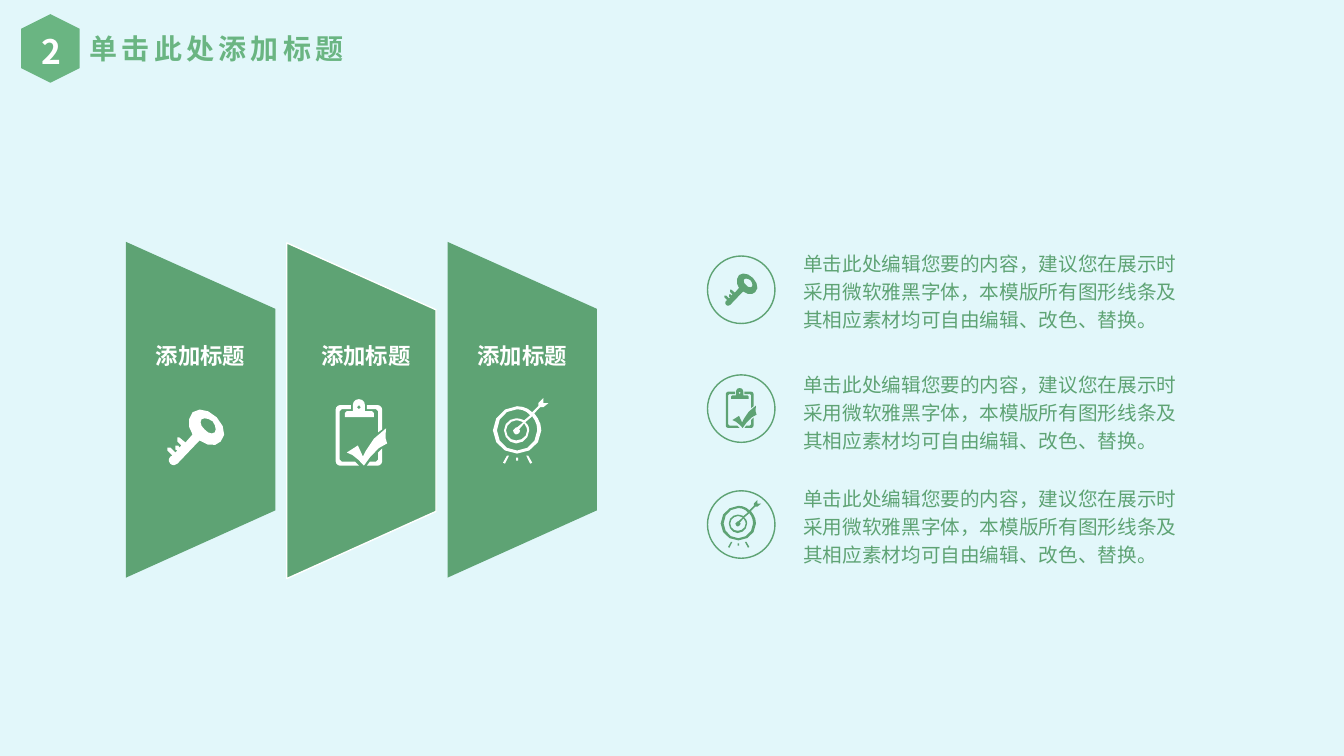
from dataclasses import dataclass
from math import dist

from lxml import etree
from pptx import Presentation
from pptx.dml.color import RGBColor
from pptx.enum.shapes import MSO_SHAPE
from pptx.enum.text import MSO_AUTO_SIZE, PP_ALIGN
from pptx.oxml.ns import qn
from pptx.shapes.autoshape import Shape
from pptx.slide import Slide
from pptx.util import Pt

HEXAGON = MSO_SHAPE.HEXAGON
OVAL = MSO_SHAPE.OVAL
FIT_SHAPE = MSO_AUTO_SIZE.SHAPE_TO_FIT_TEXT
LEFT = PP_ALIGN.LEFT
CENTER = PP_ALIGN.CENTER

Point = tuple[float, float]
Contour = list[tuple[float, ...]]
Icon = list[Contour]


@dataclass(frozen=True)
class Theme:
    background: RGBColor = RGBColor(0xE2, 0xF7, 0xFA)
    accent: RGBColor = RGBColor(0x6A, 0xB5, 0x82)
    green: RGBColor = RGBColor(0x5E, 0xA3, 0x74)
    white: RGBColor = RGBColor(0xFF, 0xFF, 0xFF)
    heading_font: str = "Noto Sans CJK SC"
    body_font: str = "Arial"
    number_size: float = 24
    title_size: float = 20
    label_size: float = 16
    body_size: float = 14
    line_width: float = 1


THEME = Theme()


@dataclass(frozen=True)
class TextStyle:
    font: str
    size: float
    color: RGBColor
    bold: bool = True
    alignment: PP_ALIGN = CENTER
    tracking: int = 0
    wrap: bool = True


@dataclass(frozen=True)
class Step:
    icon: Icon
    panel_top: float
    outlined: bool
    label_left: float
    large_icon: Point
    circle_top: float
    small_icon: Point
    small_scale: float
    body_top: float


NUMBER = TextStyle(THEME.heading_font, THEME.number_size, THEME.white, wrap=False)
TITLE = TextStyle(THEME.heading_font, THEME.title_size, THEME.accent, alignment=LEFT, tracking=300)
LABEL = TextStyle(THEME.body_font, THEME.label_size, THEME.white)
BODY = TextStyle(THEME.body_font, THEME.body_size, THEME.green, bold=False, alignment=LEFT)

LABEL_TEXT = "添加标题"
BODY_TEXT = "单击此处编辑您要的内容，建议您在展示时采用微软雅黑字体，本模版所有图形线条及其相应素材均可自由编辑、改色、替换。"

ICON_UNIT = 0.72
SHORT_CURVE = 5
CURVE_STEPS = 3
PANEL_LEFT, PANEL_PITCH = 90, 114.84
PANEL_OUTLINE = [(0, 239.8), (0, 0), (106.6, 47.8), (106.6, 191.8)]

KEY: Icon = [
    [(33, 33), (11, 56), (8, 58, 6, 58, 4, 56), (2, 54, 2, 51, 4, 49), (6, 48), (1, 43),
     (0, 42, 0, 41, 1, 40), (2, 39, 3, 39, 4, 40), (9, 45), (11, 43), (9, 42),
     (8, 40, 8, 39, 9, 38), (10, 38, 11, 38, 12, 38), (13, 40), (15, 38), (11, 34),
     (10, 33, 10, 31, 11, 30), (11, 29, 13, 29, 13, 30), (19, 35), (26, 27),
     (21, 20, 21, 11, 26, 5), (32, 0, 42, 2, 50, 10), (58, 18, 60, 29, 54, 34),
     (50, 39, 41, 39, 33, 33)],
    [(46, 14), (42, 11, 37, 10, 35, 12), (33, 14, 34, 19, 38, 22),
     (41, 26, 46, 27, 48, 25), (50, 23, 49, 18, 46, 14)],
]
CLIPBOARD: Icon = [
    [(51, 44), (44, 45, 32, 59, 28, 66), (23, 60, 16, 54, 11, 53), (22, 46), (27, 57),
     (27, 57, 36, 36, 50, 29), (50, 34, 48, 38, 51, 44)],
    [(42, 12), (40, 10), (31, 10), (31, 6), (42, 6), (44, 6, 46, 8, 46, 10), (46, 30), (42, 33)],
    [(36, 12), (38, 14), (38, 18), (9, 18), (9, 14), (11, 12), (17, 12), (17, 6),
     (17, 3, 19, 0, 23, 0), (27, 0, 29, 3, 29, 6), (29, 12)],
    [(23, 6), (21, 8), (23, 10), (25, 8)],
    [(4, 12), (4, 60), (6, 62), (19, 62), (23, 66), (4, 66), (2, 66, 0, 64, 0, 62), (0, 10),
     (0, 8, 2, 6, 4, 6), (15, 6), (15, 10), (6, 10)],
    [(40, 62), (42, 60), (42, 53), (46, 49), (46, 62), (46, 64, 44, 66, 42, 66), (31, 66),
     (34, 62)],
]
TARGET: Icon = [
    [(55, 5), (50, 9), (47, 9), (41, 15), (45, 20, 48, 25, 48, 32), (48, 45, 37, 55, 24, 55),
     (11, 55, 0, 45, 0, 32), (0, 19, 11, 8, 24, 8), (30, 8, 35, 10, 39, 14), (45, 8),
     (45, 5), (50, 0), (50, 5)],
    [(39, 18), (32, 24), (35, 26, 36, 29, 36, 32), (36, 39, 30, 45, 23, 45),
     (17, 45, 11, 39, 11, 32), (11, 25, 17, 20, 23, 20), (26, 20, 29, 21, 31, 22), (37, 17),
     (34, 13, 29, 11, 24, 11), (13, 11, 4, 20, 4, 32), (4, 43, 13, 52, 24, 52),
     (35, 52, 44, 43, 44, 32), (44, 26, 42, 22, 39, 18)],
    [(23, 36), (22, 36, 20, 34, 20, 32), (20, 31, 22, 29, 23, 29), (24, 29), (30, 24),
     (28, 23, 26, 22, 23, 22), (18, 22, 13, 27, 13, 32), (13, 38, 18, 42, 23, 42),
     (29, 42, 34, 38, 34, 32), (34, 29, 32, 27, 31, 25), (26, 31), (27, 32),
     (27, 34, 25, 36, 23, 36)],
    [(14, 57), (16, 57), (12, 65), (10, 64)],
    [(23, 59), (25, 59), (25, 62), (23, 62)],
    [(33, 57), (35, 57), (39, 64), (37, 65)],
]

STEPS = [
    Step(KEY, 172.8, False, 100.1, (118.8, 290.9), 182.9, (517, 194.4), 0.58, 176.4),
    Step(CLIPBOARD, 173.5, True, 218.2, (239.8, 285.1), 267.8, (518.4, 277.2), 0.6, 262.8),
    Step(TARGET, 172.8, False, 329.8, (352.1, 284.4), 350.6, (514.8, 357.1), 0.73, 344.2),
]


def paint(shape: Shape, fill: RGBColor | None, line: RGBColor | None = None) -> None:
    shape.shadow.inherit = False
    if fill is None:
        shape.fill.background()
    else:
        shape.fill.solid()
        shape.fill.fore_color.rgb = fill
    if line is None:
        shape.line.fill.background()
    else:
        shape.line.color.rgb = line
        shape.line.width = Pt(THEME.line_width)


def flatten(contour: Contour) -> list[Point]:
    points: list[Point] = []
    for segment in contour:
        if len(segment) == 2 or dist(points[-1], segment[-2:]) < SHORT_CURVE:
            points.append(segment[-2:])
            continue
        controls = (*points[-1], *segment)
        for step in range(1, CURVE_STEPS + 1):
            t = step / CURVE_STEPS
            weights = ((1 - t) ** 3, 3 * t * (1 - t) ** 2, 3 * t * t * (1 - t), t ** 3)
            x = sum(weight * value for weight, value in zip(weights, controls[::2]))
            y = sum(weight * value for weight, value in zip(weights, controls[1::2]))
            points.append((x, y))
    return points


def add_outline(slide: Slide, contours: Icon, origin: Point, scale: float) -> Shape:
    builder = None
    for contour in contours:
        points = [(Pt(origin[0] + x * scale), Pt(origin[1] + y * scale)) for x, y in flatten(contour)]
        if builder is None:
            builder = slide.shapes.build_freeform(*points[0])
        else:
            builder.move_to(*points[0])
        builder.add_line_segments(points[1:], close=True)
    return builder.convert_to_shape()


def add_text(slide: Slide, text: str, left: float, top: float, width: float, height: float,
             style: TextStyle) -> Shape:
    shape = slide.shapes.add_textbox(Pt(left), Pt(top), Pt(width), Pt(height))
    frame = shape.text_frame
    frame.word_wrap = style.wrap
    frame.auto_size = FIT_SHAPE
    frame.text = text
    paragraph = frame.paragraphs[0]
    paragraph.alignment = style.alignment
    font = paragraph.runs[0].font
    font.name, font.size, font.bold = style.font, Pt(style.size), style.bold
    font.color.rgb = style.color
    properties = paragraph.runs[0]._r.get_or_add_rPr()
    etree.SubElement(properties, qn("a:ea")).set("typeface", THEME.heading_font)
    if style.tracking:
        properties.set("spc", str(style.tracking))
    return shape


def add_body(slide: Slide, top: float) -> None:
    frame = add_text(slide, BODY_TEXT, 573.8, top, 275, 61.2, BODY).text_frame
    frame.margin_left = frame.margin_right = frame.margin_top = frame.margin_bottom = 0
    frame.paragraphs[0].line_spacing = 1.2
    frame.paragraphs[0].space_before = Pt(2.8)


def add_step(slide: Slide, step: Step, index: int) -> None:
    panel_origin = (PANEL_LEFT + index * PANEL_PITCH, step.panel_top)
    panel = add_outline(slide, [PANEL_OUTLINE], panel_origin, 1)
    paint(panel, THEME.green, THEME.white if step.outlined else None)
    paint(add_outline(slide, step.icon, step.large_icon, ICON_UNIT), THEME.white)
    add_text(slide, LABEL_TEXT, step.label_left, 241.2, 86.4, 26.6, LABEL)
    circle = slide.shapes.add_shape(OVAL, Pt(505.4), Pt(step.circle_top), Pt(48.2), Pt(48.2))
    paint(circle, None, THEME.green)
    paint(add_outline(slide, step.icon, step.small_icon, ICON_UNIT * step.small_scale), THEME.green)
    add_body(slide, step.body_top)


def main() -> None:
    presentation = Presentation()
    presentation.slide_width, presentation.slide_height = Pt(960), Pt(540)
    slide = presentation.slides.add_slide(presentation.slide_layouts[6])
    slide.background.fill.solid()
    slide.background.fill.fore_color.rgb = THEME.background
    badge = slide.shapes.add_shape(HEXAGON, Pt(11.5), Pt(13.7), Pt(49), Pt(41.8))
    badge.rotation = 90
    paint(badge, THEME.accent)
    add_text(slide, "2", 22.3, 18.7, 28.1, 36, NUMBER)
    add_text(slide, "单击此处添加标题", 56.9, 18.7, 216.7, 31.7, TITLE)
    for index, step in enumerate(STEPS):
        add_step(slide, step, index)
    presentation.save("out.pptx")


if __name__ == "__main__":
    main()
